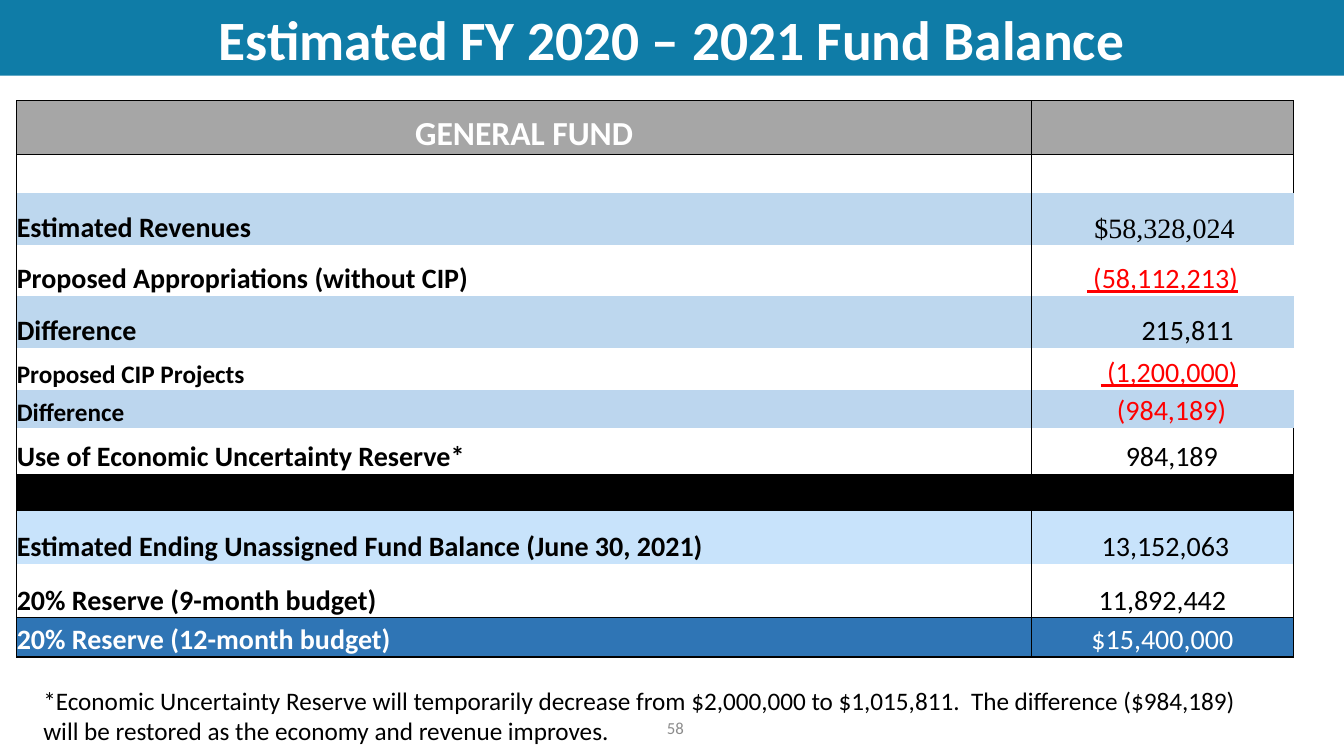
from lxml.etree import SubElement
from pptx import Presentation
from pptx.dml.color import RGBColor
from pptx.enum.shapes import MSO_SHAPE
from pptx.enum.text import MSO_ANCHOR, PP_ALIGN
from pptx.oxml.ns import qn
from pptx.util import Inches, Pt

THEME = {
    "font": "Calibri", "serif": "Times New Roman",
    "teal": "0F7CA7", "gray": "A6A6A6", "number": "8C8C8C",
    "band": "BDD7EE", "soft band": "BCD6EE", "pale": "C8E3FB", "blue": "2F75B5",
    "white": "FFFFFF", "black": "000000", "red": "FF0000",
    "title": 39.6, "heading": 24, "body": 20, "small": 18, "page": 12,
}

presentation = Presentation()
presentation.slide_width, presentation.slide_height = Inches(13.33), Inches(7.5)
slide = presentation.slides.add_slide(presentation.slide_layouts[6])

# Grid of 100 columns by 100 rows
COLUMN = presentation.slide_width / 100
ROW = presentation.slide_height / 100


def place(left, top, width, height):
    return int(left * COLUMN), int(top * ROW), int(width * COLUMN), int(height * ROW)


def write(frame, text, size, color="black", align=PP_ALIGN.LEFT, **formats):
    paragraph = frame.paragraphs[0]
    paragraph.alignment = align
    run = paragraph.add_run()
    run.text = text
    formats = {"name": THEME["font"], "size": Pt(THEME[size]), **formats}
    for name, value in formats.items():
        setattr(run.font, name, value)
    run.font.color.rgb = RGBColor.from_string(THEME[color])


# Title band
band = slide.shapes.add_shape(MSO_SHAPE.RECTANGLE, *place(0, 0, 100, 10))
band.shadow.inherit = False
band.fill.solid()
band.fill.fore_color.rgb = RGBColor.from_string(THEME["teal"])
band.line.fill.background()
band.text_frame.vertical_anchor = MSO_ANCHOR.MIDDLE
band.text_frame.margin_top = band.text_frame.margin_bottom = 0
write(band.text_frame, "Estimated FY 2020 – 2021 Fund Balance", "title", "white",
      PP_ALIGN.CENTER, bold=True)

# Page number
number = slide.shapes.add_textbox(*place(48.46, 93.6, 3.15, 5.33))
number.text_frame.word_wrap = True
number.text_frame.vertical_anchor = MSO_ANCHOR.MIDDLE
write(number.text_frame, "58", "page", "number", PP_ALIGN.RIGHT)

# Fund lines: height, fill, label, label size, amount, amount color, left margin of amount
fund_lines = [
    (7.07, "gray", "GENERAL FUND", "heading", "", "black", 0),
    (5.2, "white", "", "body", "", "black", 0),
    (6.8, "band", "Estimated Revenues", "body", "$58,328,024", "black", 0.3),
    (6.8, "white", "Proposed Appropriations (without CIP)", "body", " (58,112,213)", "red", 0),
    (6.8, "band", "Difference", "body", "215,811", "black", 3.75),
    (5.6, "white", "Proposed CIP Projects", "small", " (1,200,000)", "red", 1),
    (5.07, "soft band", "Difference", "small", "(984,189)", "red", 1.35),
    (6, "white", "Use of Economic Uncertainty Reserve*", "body", "984,189", "black", 1.4),
    (4.93, "black", "", "body", "", "black", 0),
    (7.07, "pale", "Estimated Ending Unassigned Fund Balance (June 30, 2021)", "body",
     "13,152,063", "black", 0.45),
    (7.07, "white", "20% Reserve (9-month budget)", "body", "11,892,442", "black", 0),
    (5.2, "blue", "20% Reserve (12-month budget)", "body", "$15,400,000", "white", 0),
]
total = sum(line[0] for line in fund_lines)
table = slide.shapes.add_table(len(fund_lines), 2, *place(1.25, 13.33, 95, total)).table
table.first_row = table.horz_banding = False
for column, share in zip(table.columns, (75.5, 19.5)):
    column.width = int(share * COLUMN)

HEADING, LAST = 0, len(fund_lines) - 1
OPEN_RIGHT = range(2, 7)
UNDERLINED = (3, 5)

for index, (height, fill, label, size, amount, color, shift) in enumerate(fund_lines):
    table.rows[index].height = int(height * ROW)
    for side, text in enumerate((label, amount)):
        cell = table.cell(index, side)
        margin = int(shift * COLUMN) if side else 0
        cell_formats = {"margin_left": margin, "margin_right": 0, "margin_top": 0,
                        "margin_bottom": 0, "vertical_anchor": MSO_ANCHOR.BOTTOM}
        for name, value in cell_formats.items():
            setattr(cell, name, value)

        # Borders: verticals throughout, rules around the heading and the last row
        edges = {
            "a:lnL": True,
            "a:lnR": side == 0 or index not in OPEN_RIGHT,
            "a:lnT": index in (HEADING, HEADING + 1, LAST),
            "a:lnB": index in (HEADING, LAST - 1, LAST),
        }
        properties = cell._tc.get_or_add_tcPr()
        for tag, visible in edges.items():
            edge = SubElement(properties, qn(tag), w=str(Pt(1)))
            if visible:
                paint = SubElement(edge, qn("a:solidFill"))
                SubElement(paint, qn("a:srgbClr"), val=THEME["black"])
            else:
                SubElement(edge, qn("a:noFill"))
        cell.fill.solid()
        cell.fill.fore_color.rgb = RGBColor.from_string(THEME[fill])

        # Cell text
        if not text:
            continue
        if side:
            face = THEME["serif"] if index == 2 else THEME["font"]
            write(cell.text_frame, text, "body", color, PP_ALIGN.CENTER, name=face,
                  bold=False, underline=index in UNDERLINED)
        else:
            align = PP_ALIGN.CENTER if index == HEADING else PP_ALIGN.LEFT
            ink = "white" if index in (HEADING, LAST) else "black"
            write(cell.text_frame, text, size, ink, align, bold=True)
table.cell(2, 1).text_frame.paragraphs[0].line_spacing = 1.08

# Footnote
footnote = slide.shapes.add_textbox(*place(2.48, 90, 91.3, 9.47))
footnote.text_frame.word_wrap = True
write(footnote.text_frame,
      "*Economic Uncertainty Reserve will temporarily decrease from $2,000,000 to $1,015,811.  "
      "The difference ($984,189) will be restored as the economy and revenue improves.", "small")

presentation.save("out.pptx")
